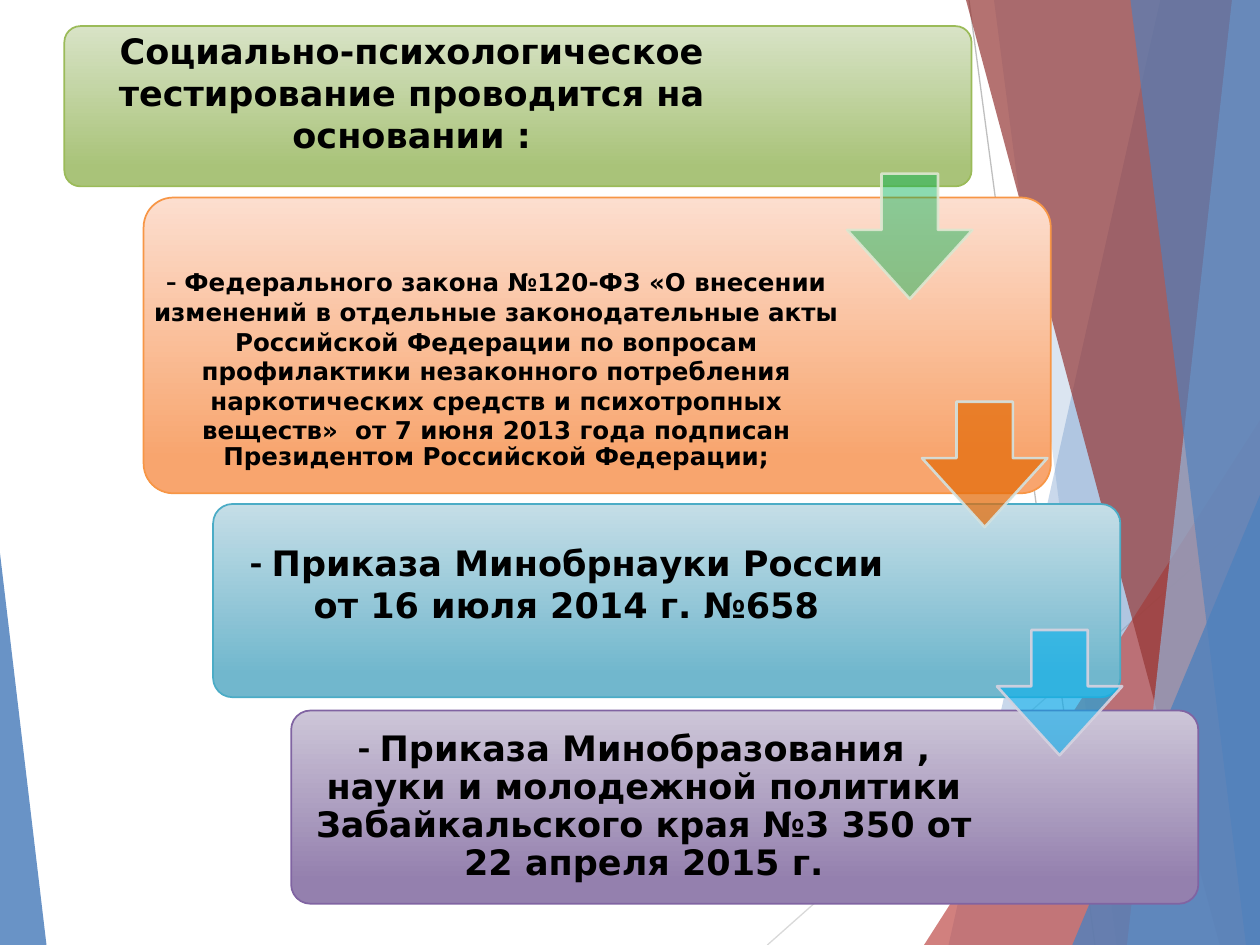
from lxml import etree
from pptx import Presentation
from pptx.dml.color import RGBColor
from pptx.enum.shapes import MSO_CONNECTOR, MSO_SHAPE
from pptx.enum.text import MSO_ANCHOR, MSO_AUTO_SIZE, PP_ALIGN
from pptx.oxml.ns import qn
from pptx.util import Pt

STRAIGHT = MSO_CONNECTOR.STRAIGHT
TRIANGLE = MSO_SHAPE.ISOSCELES_TRIANGLE
ROUNDED, ARROW = MSO_SHAPE.ROUNDED_RECTANGLE, MSO_SHAPE.DOWN_ARROW
CENTER, MIDDLE = PP_ALIGN.CENTER, MSO_ANCHOR.MIDDLE

W, H = 720, 540
COLORS = {
    "black": "000000", "gray": "BFBFBF", "light gray": "D9D9D9",
    "blue": "4F81BD", "pale blue": "95B3D7", "red": "C0504D", "dark red": "953735",
}
SANS, ROBOTO, TIMES = "DejaVu Sans", "Roboto", "Times New Roman"

# Background: thin lines, then facets back to front (fill, opacity %)
LINES = [("gray", 553.7, 0, 625.7, H), ("light gray", W, 290.2, 438.5, H)]
FACETS = [
    ("blue", 30, [(663, 0), (W, 0), (W, H), (542, H)]),
    ("blue", 20, [(567.5, 0), (W, 0), (W, H), (638.5, H)]),
    ("red", 72, (528, 240, 192, 300, 1)),
    ("dark red", 70, [(551.5, 0), (W, 0), (W, H), (697, H)]),
    ("pale blue", 70, [(703.5, 0), (W, 0), (W, H), (643.5, H)]),
    ("blue", 65, [(646, 0), (W, 0), (W, H), (711.5, H)]),
    ("blue", 80, (612.8, 283, 107.2, 257, 1)),
    ("blue", 85, (0, 316, 26.6, 224, 0)),
]

# Steps: left, top, height, text width, lift of the text,
# gradient and border, paragraphs as (line spacing, [(text, font, size, bold)])
STEPS = [
    (36.8, 14.9, 91.6, 397, 7.7, ("D8E3C6", "A9C379", "9BBB59"), [
        (1, [("Социально-психологическое тестирование проводится на основании :",
              SANS, 20, True)])]),
    (82.1, 112.9, 169, 403.2, 0, ("FCDECF", "F8A56E", "F79646"), [
        (1, [("\u00a0", TIMES, 19, False)]),
        (1, [("- ", TIMES, 18, True),
             ("Федерального закона №120-ФЗ «О внесении изменений в отдельные "
              "законодательные акты Российской Федерации по вопросам профилактики "
              "незаконного потребления наркотических средств и психотропных "
              "веществ»  от 7 июня 2013 года подписан", SANS, 14, True)]),
        (0.9, [("Президентом Российской Федерации;", SANS, 14, True)])]),
    (121.8, 288, 110.4, 403.9, 10, ("C5DEE7", "71B7CD", "4BACC6"), [
        (1, [("- ", ROBOTO, 20, True),
             ("Приказа Минобрнауки России от 16 июля 2014 г. №658", SANS, 20, True)])]),
    (166.4, 406, 110.4, 403.2, 0, ("CDC6D8", "9480AE", "8064A2"), [
        (0.9, [("- ", ROBOTO, 20, True),
               ("Приказа Минобразования , науки и молодежной политики "
                "Забайкальского края №3 350 от 22 апреля 2015 г.", SANS, 20, True)])]),
]
STEP_WIDTH, INSET = 518.4, 5.8

# Arrows: fill, opacity, border, border opacity 90
ARROWS = [("00B050", 45, "DEE7D1"), ("E46C0A", 73, "D2E3E2"), ("00B0F0", 56, "D8D3E0")]
ARROW_LEFT, ARROW_TOP, ARROW_SIZE = 484.1, 99.2, 71.6
ARROW_DX, ARROW_DY = 42.8, 130.4


def rgb(value):
    return RGBColor.from_string(COLORS.get(value, value))


def paint(fill, color, opacity):
    fill.solid()
    fill.fore_color.rgb = rgb(color)
    clr = fill._xPr.find(qn("a:solidFill"))[0]
    etree.SubElement(clr, qn("a:alpha")).set("val", str(opacity * 1000))


def add_preset(kind, left, top, width, height, *adjustments):
    sp = s.shapes.add_shape(kind, Pt(left), Pt(top), Pt(width), Pt(height))
    sp.shadow.inherit = False
    for i, value in enumerate(adjustments):
        sp.adjustments[i] = value
    return sp


def add_line(color, x1, y1, x2, y2):
    line = s.shapes.add_connector(STRAIGHT, Pt(x1), Pt(y1), Pt(x2), Pt(y2))
    line.line.color.rgb = rgb(color)
    line.line.width = Pt(0.75)
    etree.SubElement(line._element.spPr, qn("a:effectLst"))


def add_facet(color, opacity, form):
    if isinstance(form, list):
        builder = s.shapes.build_freeform(*form[0], scale=Pt(1))
        builder.add_line_segments(form[1:], close=True)
        sp = builder.convert_to_shape()
        sp.shadow.inherit = False
    else:
        sp = add_preset(TRIANGLE, *form)
    paint(sp.fill, color, opacity)
    sp.line.fill.background()


def add_panel(left, top, height, colors):
    sp = add_preset(ROUNDED, left, top, STEP_WIDTH, height, 0.1)
    sp.fill.gradient()
    sp.fill.gradient_angle = 270
    for stop, position, color in zip(sp.fill.gradient_stops, (0, 0.88), colors):
        stop.position = position
        stop.color.rgb = rgb(color)
    sp.line.color.rgb = rgb(colors[2])
    sp.line.width = Pt(1)


def fill_text(sp, lift, paragraphs):
    tf = sp.text_frame
    tf.word_wrap = True
    tf.auto_size = MSO_AUTO_SIZE.NONE
    tf.vertical_anchor = MIDDLE
    tf.margin_left = tf.margin_right = tf.margin_top = Pt(INSET)
    tf.margin_bottom = Pt(INSET + 2 * lift)
    for i, (spacing, runs) in enumerate(paragraphs):
        p = tf.add_paragraph() if i else tf.paragraphs[0]
        p.alignment = CENTER
        p.line_spacing = spacing
        p.space_before = p.space_after = Pt(0)
        for text, font, size, bold in runs:
            r = p.add_run()
            r.text = text
            r.font.name, r.font.size, r.font.bold = font, Pt(size), bold
            r.font.color.rgb = rgb("black")


prs = Presentation()
prs.slide_width, prs.slide_height = Pt(W), Pt(H)
s = prs.slides.add_slide(prs.slide_layouts[5])
title = s.shapes.title

# Background
for line in LINES:
    add_line(*line)
for facet in FACETS:
    add_facet(*facet)

# Staircase of panels; the first one carries the title
for i, (left, top, height, width, lift, colors, paragraphs) in enumerate(STEPS):
    add_panel(left, top, height, colors)
    box = (Pt(left), Pt(top), Pt(width), Pt(height))
    if i == 0:
        sp = title
        sp.left, sp.top, sp.width, sp.height = box
        s.shapes._spTree.append(sp._element)  # bring in front of its panel
    else:
        sp = s.shapes.add_textbox(*box)
    fill_text(sp, lift, paragraphs)

# Arrows between the steps
for i, (color, opacity, border) in enumerate(ARROWS):
    sp = add_preset(ARROW, ARROW_LEFT + i * ARROW_DX, ARROW_TOP + i * ARROW_DY,
                    ARROW_SIZE, ARROW_SIZE, 0.45, 0.55)
    paint(sp.fill, color, opacity)
    paint(sp.line.fill, border, 90)
    sp.line.width = Pt(1.5)

prs.save("out.pptx")
